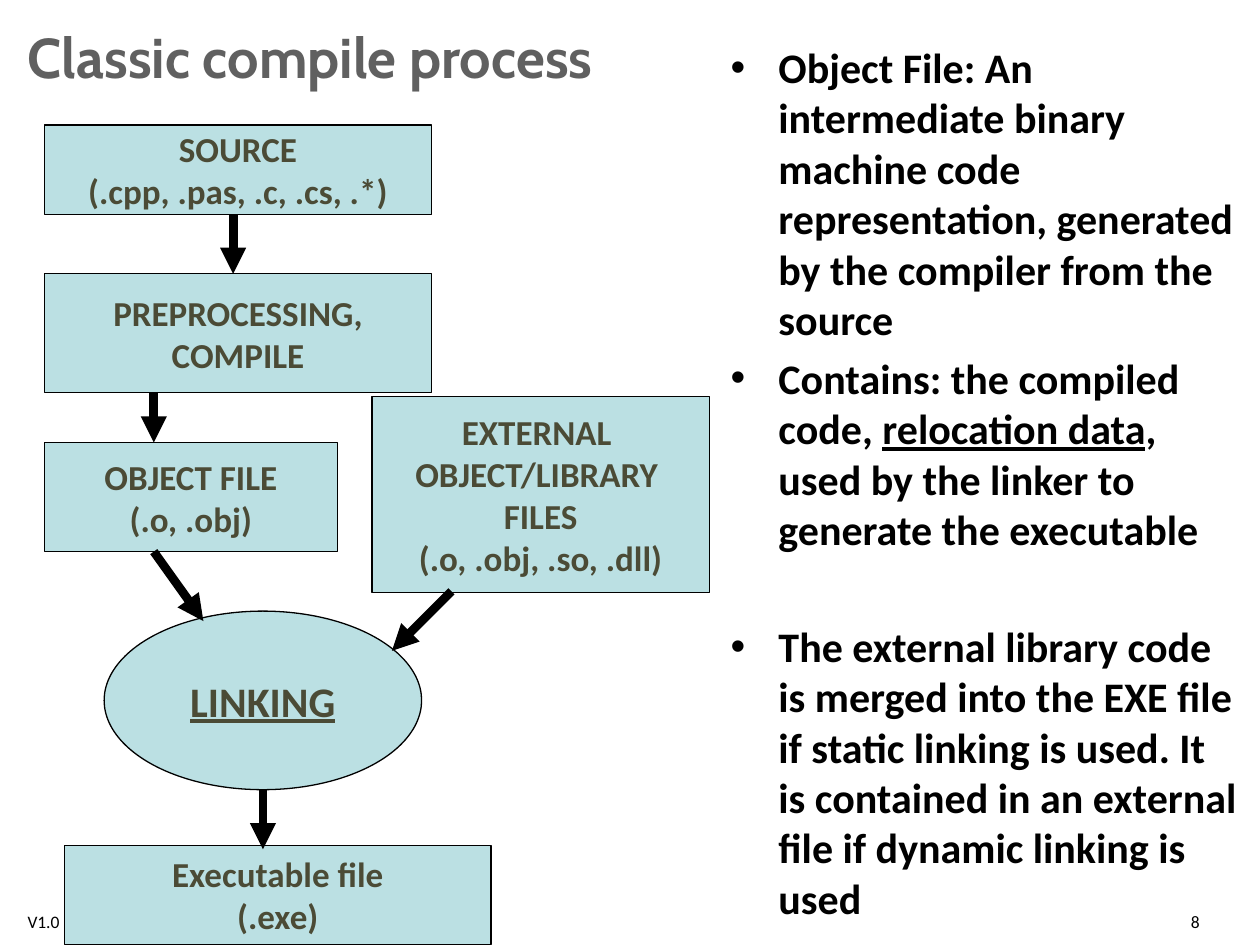
from lxml import etree
from pptx import Presentation
from pptx.dml.color import RGBColor
from pptx.enum.shapes import MSO_CONNECTOR, MSO_SHAPE
from pptx.enum.text import MSO_ANCHOR, MSO_AUTO_SIZE, PP_ALIGN
from pptx.oxml.ns import qn
from pptx.util import Inches, Mm, Pt

RECT, OVAL = MSO_SHAPE.RECTANGLE, MSO_SHAPE.OVAL
LEFT, CENTER, RIGHT = PP_ALIGN.LEFT, PP_ALIGN.CENTER, PP_ALIGN.RIGHT
TOP, MIDDLE = MSO_ANCHOR.TOP, MSO_ANCHOR.MIDDLE
TITLE_ONLY = 5

# The flowchart sits on a 2 mm grid that starts at the first box
CELL = Mm(2)
FLOW_LEFT, FLOW_TOP = 4.5, 12.6

BLACK, GREY, OLIVE, PALE_BLUE = "000000", "606060", "4B4B36", "BBE0E3"
TITLE_FONT = {"name": "Cabin", "size": Pt(32), "bold": True, "color": GREY}
STEP_FONT = {"name": "Calibri", "size": Pt(20), "bold": True, "color": OLIVE}
LINK_FONT = {**STEP_FONT, "size": Pt(24), "underline": True}
NOTE_FONT = {"name": "Calibri", "size": Pt(24), "bold": True, "color": BLACK}
FOOTER_FONT = {"name": "Calibri", "size": Pt(10), "color": BLACK}

# Shape, column, row, columns wide, rows high, text, font
STEPS = [
    (RECT, 0, 0, 39, 9, "SOURCE\n(.cpp, .pas, .c, .cs, .*)", STEP_FONT),
    (RECT, 0, 15, 39, 12, "PREPROCESSING,\nCOMPILE", STEP_FONT),
    (RECT, 0, 32, 29.5, 11, "OBJECT FILE\n(.o, .obj)", STEP_FONT),
    (RECT, 33, 27.4, 34, 19.7,
     "EXTERNAL \vOBJECT/LIBRARY \vFILES\n(.o, .obj, .so, .dll)", STEP_FONT),
    (OVAL, 6, 49, 32, 18, "LINKING", LINK_FONT),
    (RECT, 2, 72.6, 43, 10, "Executable file\n(.exe)", STEP_FONT),
]

# Start column and row, end column and row
ARROWS = [
    (19, 9, 19, 15),
    (11, 27, 11, 32),
    (11, 43, 16, 50),
    (41, 47, 35, 53),
    (22, 67, 22, 73),
]

# Space before in points, then pieces of text with their underline
NOTES = [
    (0, [("Object File: An intermediate binary machine code representation, "
          "generated by the compiler from the source", False)]),
    (4.8, [("Contains: the compiled code, ", False),
           ("relocation data", True),
           (", used by the linker to generate the executable", False)]),
    (38, [("The external library code is merged into the EXE file if static "
           "linking is used. It is contained in an external file if dynamic "
           "linking is used", False)]),
]


def rgb(value):
    return RGBColor.from_string(value)


def style(font, values):
    for key, value in values.items():
        if key == "color":
            font.color.rgb = rgb(value)
        else:
            setattr(font, key, value)


def flow_point(column, row):
    return round((FLOW_LEFT + column) * CELL), round((FLOW_TOP + row) * CELL)


def write(frame, text, values, align, anchor, wrap):
    frame.text = text
    frame.word_wrap = wrap
    frame.vertical_anchor = anchor
    for paragraph in frame.paragraphs:
        paragraph.alignment = align
        for run in paragraph.runs:
            style(run.font, values)


def add_title(slide, text):
    title = slide.shapes.title
    place = {"left": 0.12, "top": 0.13, "width": 9.76, "height": 0.63}
    for side, length in place.items():
        setattr(title, side, Inches(length))
    write(title.text_frame, text, TITLE_FONT, LEFT, MIDDLE, True)
    title.text_frame.auto_size = MSO_AUTO_SIZE.NONE


def add_step(slide, kind, column, row, columns, rows, text, values):
    step = slide.shapes.add_shape(kind, *flow_point(column, row),
                                  round(columns * CELL), round(rows * CELL))
    step.shadow.inherit = False
    step.fill.solid()
    step.fill.fore_color.rgb = rgb(PALE_BLUE)
    step.line.color.rgb = rgb(BLACK)
    step.line.width = Pt(0.75)
    write(step.text_frame, text, values, CENTER, MIDDLE, False)


def add_arrow(slide, from_column, from_row, to_column, to_row):
    arrow = slide.shapes.add_connector(
        MSO_CONNECTOR.STRAIGHT,
        *flow_point(from_column, from_row), *flow_point(to_column, to_row))
    arrow.line.color.rgb = rgb(BLACK)
    arrow.line.width = Pt(5)
    line = arrow.line._get_or_add_ln()
    etree.SubElement(line, qn("a:tailEnd"), type="triangle")
    etree.SubElement(arrow._element.spPr, qn("a:effectLst"))


def add_notes(slide):
    box = slide.shapes.add_textbox(
        Inches(5.7), Inches(0.28), Inches(4.18), Inches(7.01))
    frame = box.text_frame
    frame.word_wrap = True
    frame.margin_right = Inches(0.05)
    for index, (space, pieces) in enumerate(NOTES):
        paragraph = frame.add_paragraph() if index else frame.paragraphs[0]
        paragraph.space_before = Pt(space)
        # Hanging bullet
        props = paragraph._p.get_or_add_pPr()
        props.set("marL", str(Inches(0.38)))
        props.set("indent", str(-Inches(0.38)))
        etree.SubElement(props, qn("a:buFont"), typeface="Arial")
        etree.SubElement(props, qn("a:buChar"), char="•")
        for text, underline in pieces:
            run = paragraph.add_run()
            run.text = text
            style(run.font, {**NOTE_FONT, "underline": underline})


def add_footer(slide, left, width, text, align):
    footer = slide.shapes.add_textbox(
        Inches(left), Inches(7.18), Inches(width), Inches(0.2))
    write(footer.text_frame, text, FOOTER_FONT, align, TOP, True)


def main():
    deck = Presentation()
    deck.slide_width, deck.slide_height = Inches(10), Inches(7.5)
    slide = deck.slides.add_slide(deck.slide_layouts[TITLE_ONLY])

    # Version, heading and explanation
    add_footer(slide, 0.12, 0.79, "V1.0", LEFT)
    add_title(slide, "Classic compile process")
    add_notes(slide)

    # Flowchart
    for step in STEPS:
        add_step(slide, *step)
    for arrow in ARROWS:
        add_arrow(slide, *arrow)

    # Page number
    add_footer(slide, 8.31, 1.31, "8", RIGHT)
    deck.save("out.pptx")


if __name__ == "__main__":
    main()
